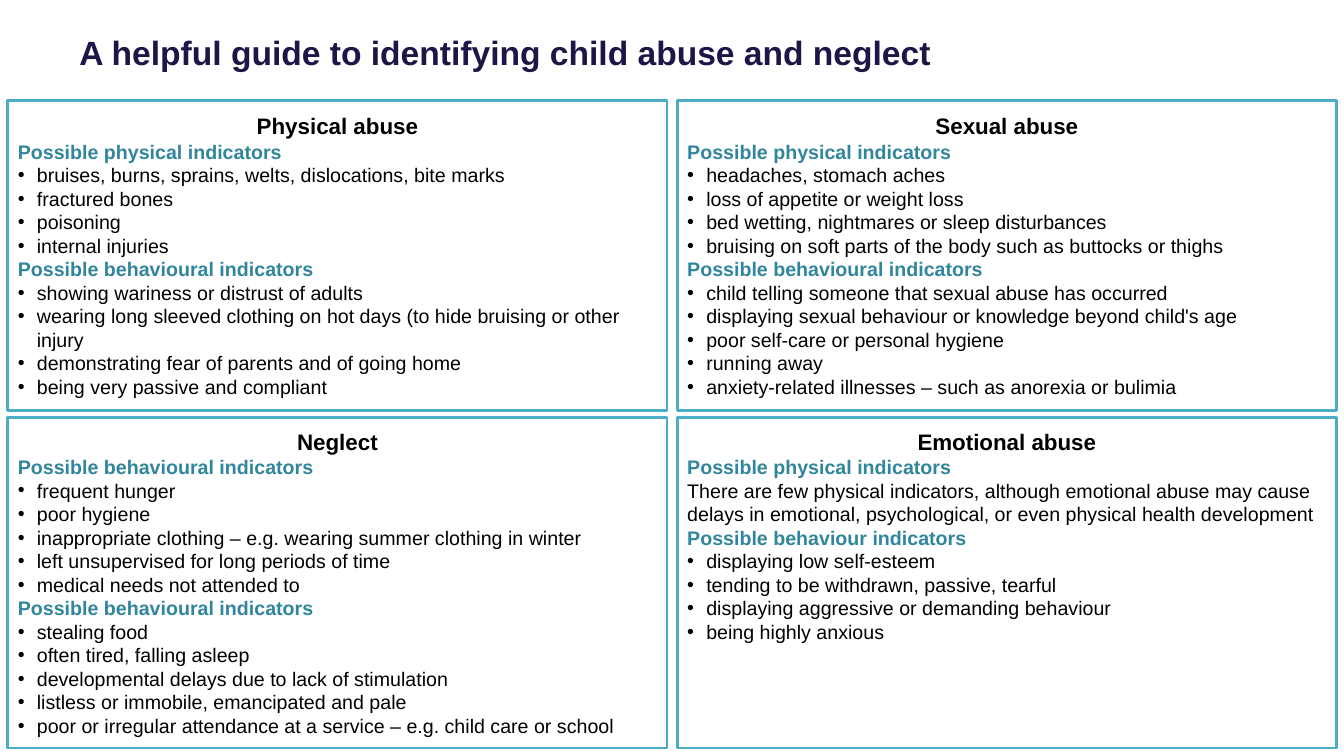
from lxml import etree
from pptx import Presentation
from pptx import util as u
from pptx.dml import color
from pptx.enum import shapes, text
from pptx.oxml import ns

FONT = "Arial"
NAVY, TEAL, BORDER, BLACK, WHITE = "201547", "31859C", "4BACC6", "000000", "FFFFFF"
PHYSICAL = "Possible physical indicators"
BEHAVIOURAL = "Possible behavioural indicators"

PHYSICAL_ABUSE = [
    (PHYSICAL, [
        "bruises, burns, sprains, welts, dislocations, bite marks",
        "fractured bones",
        "poisoning",
        "internal injuries",
    ]),
    (BEHAVIOURAL, [
        "showing wariness or distrust of adults",
        "wearing long sleeved clothing on hot days (to hide bruising or other injury",
        "demonstrating fear of parents and of going home",
        "being very passive and compliant",
    ]),
]
SEXUAL_ABUSE = [
    (PHYSICAL, [
        "headaches, stomach aches",
        "loss of appetite or weight loss",
        "bed wetting, nightmares or sleep disturbances",
        "bruising on soft parts of the body such as buttocks or thighs",
    ]),
    (BEHAVIOURAL, [
        "child telling someone that sexual abuse has occurred",
        "displaying sexual behaviour or knowledge beyond child's age",
        "poor self-care or personal hygiene",
        "running away",
        "anxiety-related illnesses – such as anorexia or bulimia",
    ]),
]
NEGLECT = [
    (BEHAVIOURAL, [
        "frequent hunger",
        "poor hygiene",
        "inappropriate clothing – e.g. wearing summer clothing in winter",
        "left unsupervised for long periods of time",
        "medical needs not attended to",
    ]),
    (BEHAVIOURAL, [
        "stealing food",
        "often tired, falling asleep",
        "developmental delays due to lack of stimulation",
        "listless or immobile, emancipated and pale",
        "poor or irregular attendance at a service – e.g. child care or school",
    ]),
]
EMOTIONAL_ABUSE = [
    (PHYSICAL, "There are few physical indicators, although emotional abuse may cause delays "
               "in emotional, psychological, or even physical health development"),
    ("Possible behaviour indicators", [
        "displaying low self-esteem",
        "tending to be withdrawn, passive, tearful",
        "displaying aggressive or demanding behaviour",
        "being highly anxious",
    ]),
]


def rgb(value):
    """Return the colour for a hex string."""
    return color.RGBColor.from_string(value)


def style(paragraph, size, colour, bold=False, align=text.PP_ALIGN.LEFT):
    """Align a paragraph and format its runs."""
    paragraph.alignment = align
    for run in paragraph.runs:
        run.font.name = FONT
        run.font.size = u.Pt(size)
        run.font.bold = bold
        run.font.color.rgb = rgb(colour)


def add_bullet(paragraph):
    """Give a paragraph a round bullet with a hanging indent."""
    properties = paragraph._p.get_or_add_pPr()
    properties.set("marL", str(u.Cm(0.48)))
    properties.set("indent", str(-u.Cm(0.48)))
    etree.SubElement(properties, ns.qn("a:buFont")).set("typeface", FONT)
    etree.SubElement(properties, ns.qn("a:buChar")).set("char", "•")


def add_line(frame, wording, colour=BLACK, bold=False, bulleted=False):
    """Append one body paragraph to a panel."""
    paragraph = frame.add_paragraph()
    paragraph.text = wording
    if bulleted:
        add_bullet(paragraph)
    style(paragraph, 14, colour, bold)


def add_panel(slide, left, top, height, heading, sections, space_below=0.13):
    """Draw a bordered panel with a heading and its indicator sections."""
    panel = slide.shapes.add_shape(
        shapes.MSO_SHAPE.RECTANGLE, u.Cm(left), u.Cm(top), u.Cm(16.61), u.Cm(height))
    panel.shadow.inherit = False
    panel.fill.solid()
    panel.fill.fore_color.rgb = rgb(WHITE)
    panel.line.color.rgb = rgb(BORDER)
    panel.line.width = u.Pt(2)
    frame = panel.text_frame
    frame.word_wrap = True
    frame.vertical_anchor = text.MSO_ANCHOR.MIDDLE
    frame.margin_bottom = u.Cm(space_below)
    frame.text = heading
    style(frame.paragraphs[0], 16, BLACK, True, text.PP_ALIGN.CENTER)
    for subheading, indicators in sections:
        add_line(frame, subheading, TEAL, bold=True)
        if isinstance(indicators, str):
            add_line(frame, indicators)
        else:
            for indicator in indicators:
                add_line(frame, indicator, bulleted=True)


def set_title(slide, wording):
    """Place and format the slide title."""
    title = slide.shapes.title
    title.left, title.top, title.width, title.height = u.Cm(2), u.Cm(0), u.Cm(24), u.Cm(2.5)
    frame = title.text_frame
    frame.text = wording
    frame.word_wrap = True
    frame.auto_size = text.MSO_AUTO_SIZE.NONE
    frame.vertical_anchor = text.MSO_ANCHOR.MIDDLE
    frame.margin_left = frame.margin_right = frame.margin_top = frame.margin_bottom = 0
    frame.paragraphs[0].line_spacing = 1.1
    style(frame.paragraphs[0], 24, NAVY, True)


def main():
    """Build the guide slide and save it."""
    deck = Presentation()
    deck.slide_width, deck.slide_height = u.Cm(33.87), u.Cm(19.05)
    slide = deck.slides.add_slide(deck.slide_layouts[5])
    set_title(slide, "A helpful guide to identifying child abuse and neglect")
    left, right = 0.2, 17.07
    upper, lower = (2.54, 7.8), (10.52, 8.33)
    add_panel(slide, left, *upper, "Physical abuse", PHYSICAL_ABUSE)
    add_panel(slide, right, *upper, "Sexual abuse", SEXUAL_ABUSE)
    add_panel(slide, left, *lower, "Neglect", NEGLECT)
    add_panel(slide, right, *lower, "Emotional abuse", EMOTIONAL_ABUSE, space_below=2.5)
    deck.save("out.pptx")


if __name__ == "__main__":
    main()
